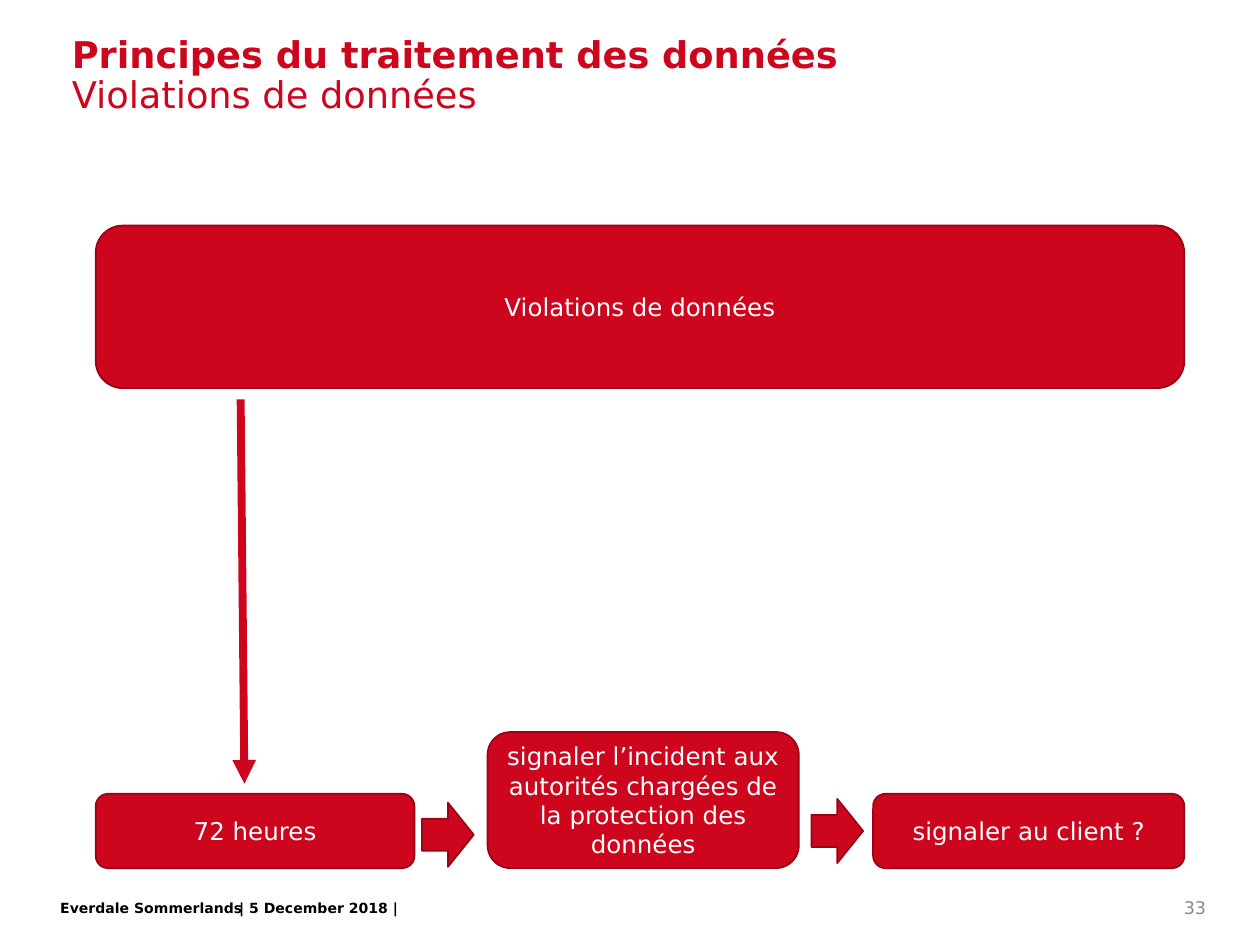
from lxml import etree
from pptx import Presentation
from pptx.dml.color import RGBColor
from pptx.enum.shapes import MSO_CONNECTOR, MSO_SHAPE
from pptx.enum.text import MSO_ANCHOR, PP_ALIGN
from pptx.oxml.ns import qn
from pptx.util import Inches, Pt

RED = RGBColor(0xCD, 0x05, 0x1D)
DARK_RED = RGBColor(0x98, 0x04, 0x15)
WHITE = RGBColor(0xFF, 0xFF, 0xFF)
BLACK = RGBColor(0x00, 0x00, 0x00)
GREY = RGBColor(0x89, 0x89, 0x89)
FONT = "DejaVu Sans"

prs = Presentation()
prs.slide_width, prs.slide_height = Inches(10), Inches(7.5)
COL, ROW = prs.slide_width / 100, prs.slide_height / 75
s = prs.slides.add_slide(prs.slide_layouts[5])


def cells(x, y, w, h):
    return int(x * COL), int(y * ROW), int(w * COL), int(h * ROW)


def style(p, size, color, align=PP_ALIGN.LEFT, bold=False):
    p.alignment = align
    p.font.name, p.font.size, p.font.bold = FONT, Pt(size), bold
    p.font.color.rgb = color


title = s.shapes.title
title.left, title.top, title.width, title.height = cells(4.7, 4.3, 90.6, 3.6)
tf = title.text_frame
tf.vertical_anchor = MSO_ANCHOR.MIDDLE
p = tf.paragraphs[0]
style(p, 21, RED)
p.line_spacing = 0.9
r = p.add_run()
r.text = "Principes du traitement des données"
r.font.bold = True
p.add_line_break()
p.add_run().text = "Violations de données"

LEFT, RIGHT, BOTTOM = 7.6, 94, 68.9
STEP_W, STEP_H = 24.7, 5.9
boxes = [
    ("Violations de données", LEFT, 17.9, RIGHT - LEFT, 12.9),
    ("72\u00a0heures", LEFT, BOTTOM - STEP_H, 25.3, STEP_H),
    ("signaler l’incident aux autorités chargées de la protection des données",
     38.7, BOTTOM - 10.8, STEP_W, 10.8),
    ("signaler au client\u00a0?", RIGHT - STEP_W, BOTTOM - STEP_H, STEP_W, STEP_H),
]
arrows = [("", 33.5, 63.7, 4.1, 5.1), ("", 64.4, 63.4, 4.1, 5.1)]
kinds = [(MSO_SHAPE.ROUNDED_RECTANGLE, boxes), (MSO_SHAPE.RIGHT_ARROW, arrows)]
for kind, items in kinds:
    for text, *place in items:
        sp = s.shapes.add_shape(kind, *cells(*place))
        sp.shadow.inherit = False
        sp.fill.solid()
        sp.fill.fore_color.rgb = RED
        sp.line.color.rgb = DARK_RED
        sp.line.width = Pt(1)
        if text:
            tf = sp.text_frame
            tf.word_wrap = True
            tf.vertical_anchor = MSO_ANCHOR.MIDDLE
            tf.text = text
            style(tf.paragraphs[0], 14, WHITE, PP_ALIGN.CENTER)

line = s.shapes.add_connector(MSO_CONNECTOR.STRAIGHT, *cells(19.1, 31.7, 19.4, 62.2))
line.line.color.rgb = RED
line.line.width = Pt(4.5)
etree.SubElement(line.line._get_or_add_ln(), qn("a:tailEnd"), type="triangle")
etree.SubElement(line._element.spPr, qn("a:effectLst"))

footers = [
    ("Everdale Sommerlands", (3.8, 70.9, 17.3, 2.4), 8, BLACK, PP_ALIGN.LEFT, True, MSO_ANCHOR.TOP),
    ("| 5 December 2018 |", (18, 70.9, 16.4, 2.4), 8, BLACK, PP_ALIGN.LEFT, True, MSO_ANCHOR.TOP),
    ("33", (88, 70.5, 8.7, 3), 10, GREY, PP_ALIGN.RIGHT, False, MSO_ANCHOR.MIDDLE),
]
for text, place, size, color, align, bold, anchor in footers:
    tf = s.shapes.add_textbox(*cells(*place)).text_frame
    tf.word_wrap = True
    tf.vertical_anchor = anchor
    tf.text = text
    style(tf.paragraphs[0], size, color, align, bold)

prs.save("out.pptx")
